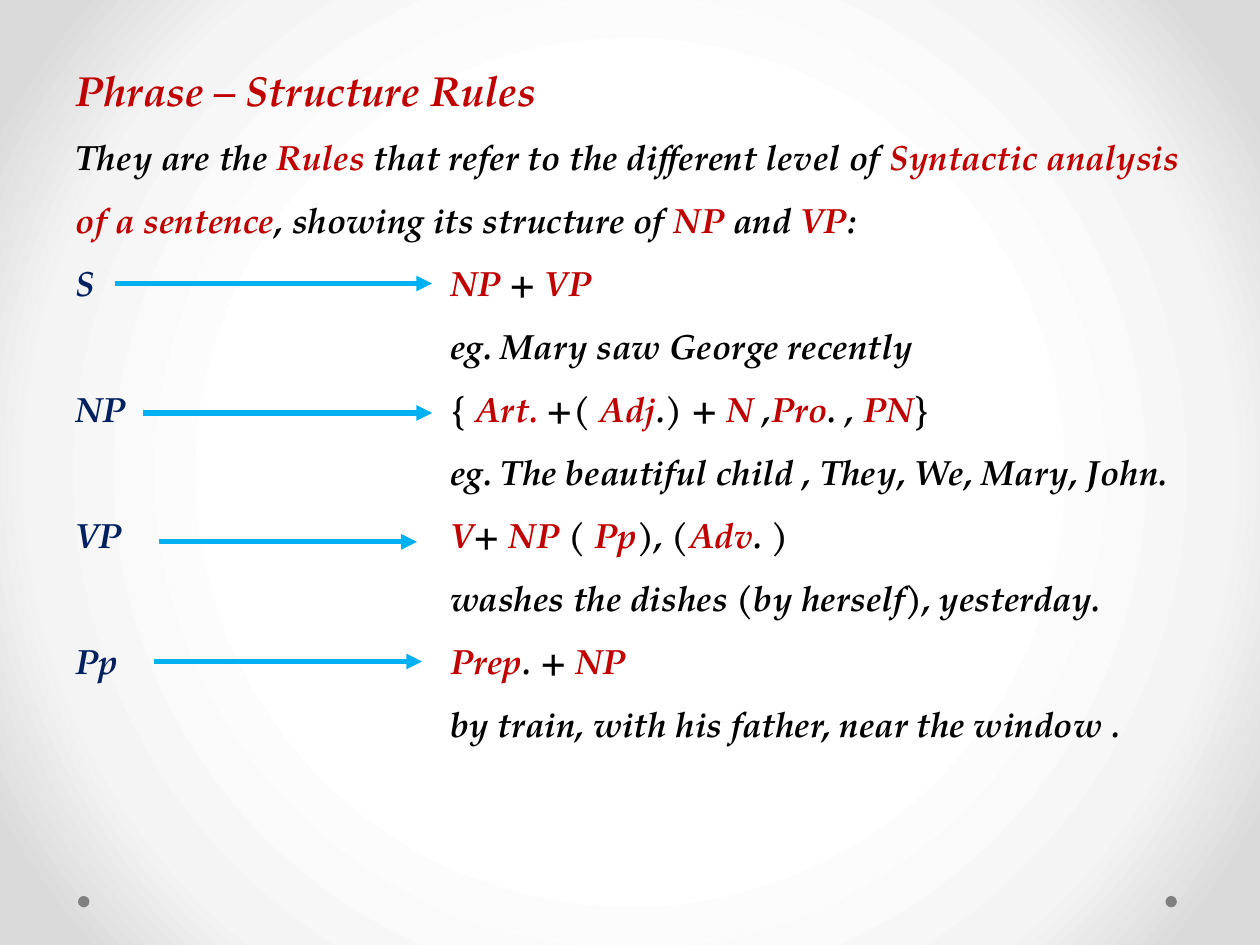
from pptx import Presentation
from pptx.dml.color import RGBColor
from pptx.enum.shapes import MSO_CONNECTOR, MSO_SHAPE
from pptx.enum.text import MSO_ANCHOR, MSO_AUTO_SIZE, PP_ALIGN
from pptx.oxml import parse_xml
from pptx.oxml.ns import nsdecls
from pptx.util import Pt

RED, BLACK, NAVY, SKY, GREY = "C00000", "000000", "002060", "00B0F0", "808080"


def paint(target, color):
    target.rgb = RGBColor.from_string(color)


def write(para, text, color, size):
    run = para.add_run()
    run.text = text
    style = {"name": "TeX Gyre Pagella", "size": Pt(size), "bold": True, "italic": True}
    for key, value in style.items():
        setattr(run.font, key, value)
    paint(run.font.color, color)


deck = Presentation()
deck.slide_width, deck.slide_height = Pt(720), Pt(540)
slide = deck.slides.add_slide(deck.slide_layouts[5])

stops = "".join(
    f'<a:gs pos="{pos}000"><a:srgbClr val="{color}"/></a:gs>'
    for pos, color in [(50, "FFFFFF"), (76, "F4F4F4"), (92, "DADADA")]
)
slide.element.cSld.insert(0, parse_xml(
    f'<p:bg {nsdecls("p", "a")}><p:bgPr><a:gradFill rotWithShape="1">'
    f'<a:gsLst>{stops}</a:gsLst><a:path path="circle">'
    '<a:fillToRect l="50000" t="50000" r="50000" b="50000"/></a:path>'
    '</a:gradFill><a:effectLst/></p:bgPr></p:bg>'
))

for left in (44.6, 666):
    dot = slide.shapes.add_shape(MSO_SHAPE.OVAL, Pt(left), Pt(512), Pt(6.5), Pt(6.5))
    dot.shadow.inherit = False
    dot.fill.solid()
    paint(dot.fill.fore_color, GREY)
    dot.line.fill.background()

title = slide.shapes.title
place = {"left": 36, "top": 18.7, "width": 648, "height": 411}
for key, value in place.items():
    setattr(title, key, Pt(value))
frame = title.text_frame
layout = {
    "word_wrap": True,
    "auto_size": MSO_AUTO_SIZE.NONE,
    "vertical_anchor": MSO_ANCHOR.TOP,
    "margin_left": Pt(7.2),
    "margin_right": Pt(7.2),
    "margin_top": Pt(3.6),
    "margin_bottom": Pt(3.6),
}
for key, value in layout.items():
    setattr(frame, key, value)

lines = [
    ("", "|Phrase – Structure Rules", 24),
    ("", "They are the |Rules| that refer to the different level of "
         "|Syntactic analysis of a sentence|, showing its structure of |NP| and |VP|:", 20),
    ("S\t", "|NP| + |VP", 20),
    ("\t", "eg. Mary saw George recently", 20),
    ("NP\t", "{ |Art.| +( |Adj|.) + |N |,|Pro|. , |PN|}", 20),
    ("\t", "eg. The beautiful child , They, We, Mary, John.", 20),
    ("VP\t", "|V|+ |NP| ( |Pp|), (|Adv|. )", 20),
    ("\t", "washes the dishes (by herself), yesterday.", 20),
    ("Pp\t", "|Prep|. + |NP", 20),
    ("\t", "by train, with his father, near the window .", 20),
]
for row, (label, body, size) in enumerate(lines):
    para = frame.add_paragraph() if row else frame.paragraphs[0]
    para.alignment = PP_ALIGN.LEFT
    para.line_spacing = 1.5
    if label:
        para._p.get_or_add_pPr().append(parse_xml(
            f'<a:tabLst {nsdecls("a")}><a:tab pos="{Pt(214)}" algn="l"/></a:tabLst>'
        ))
        write(para, label, NAVY, size)
    for part, text in enumerate(body.split("|")):
        if text:
            write(para, text, RED if part % 2 else BLACK, size)

arrows = [(65.5, 247, 162), (82, 247, 236), (90.7, 238.3, 309.6), (87.8, 241.2, 378)]
for start, end, y in arrows:
    arrow = slide.shapes.add_connector(MSO_CONNECTOR.STRAIGHT, Pt(start), Pt(y), Pt(end), Pt(y))
    arrow.line.width = Pt(3)
    paint(arrow.line.color, SKY)
    arrow.line._get_or_add_ln().append(parse_xml(f'<a:tailEnd {nsdecls("a")} type="triangle"/>'))
    arrow._element.spPr.append(parse_xml(f'<a:effectLst {nsdecls("a")}/>'))

deck.save("out.pptx")
